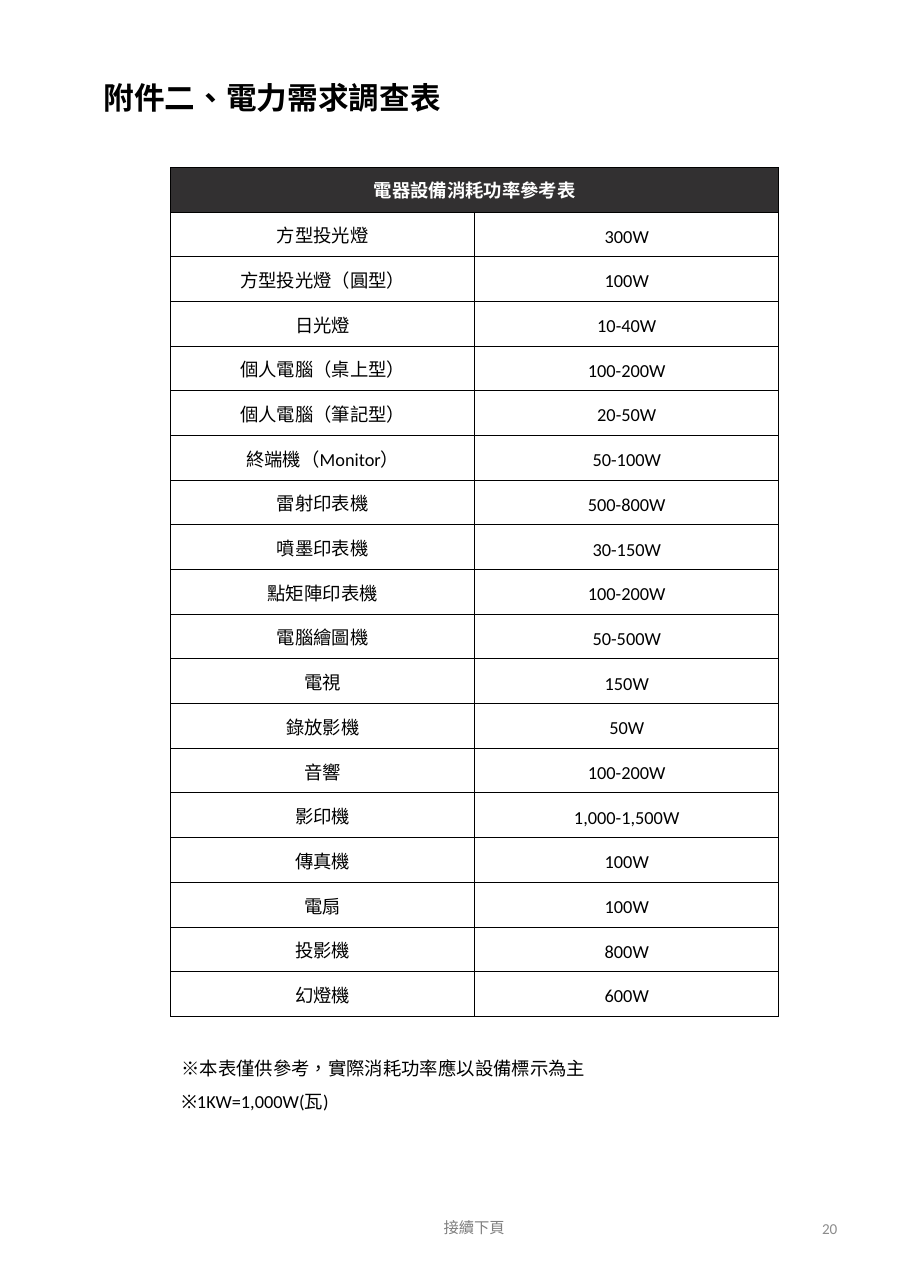
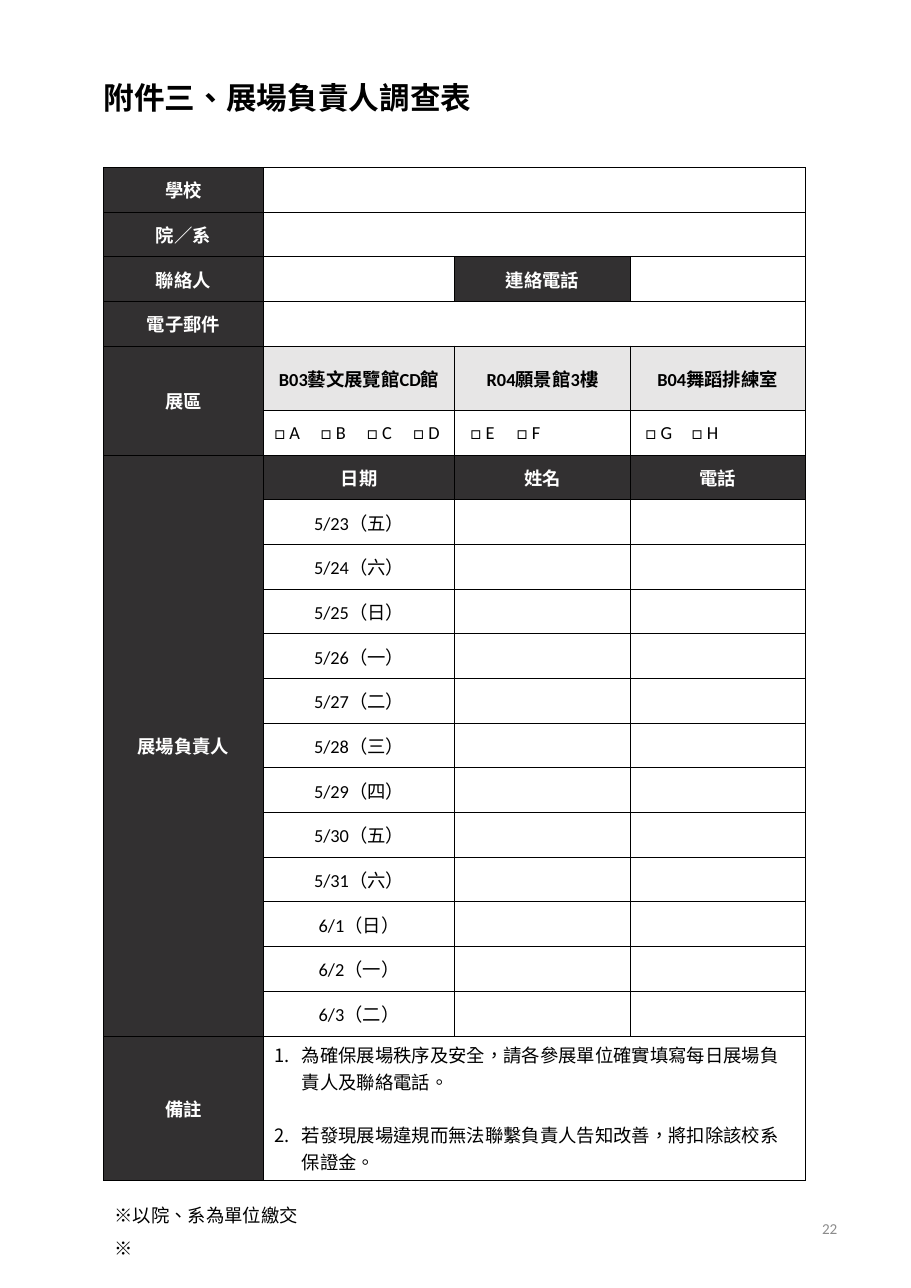
"""Build the power demand form and the venue manager form."""
from lxml import etree
from pptx import Presentation
from pptx.dml.color import RGBColor
from pptx.enum import text
from pptx.oxml import ns
from pptx.util import Inches, Pt

CJK, LATIN = "Noto Sans CJK SC", "Calibri"
BLACK, WHITE, DARK, PALE = "000000", "FFFFFF", "323031", "E7E6E6"
ROW = 7.71 / 19
TOP = 1.52
LEFT, MID, RIGHT = text.PP_ALIGN.LEFT, text.PP_ALIGN.CENTER, text.PP_ALIGN.RIGHT


def put(para, words, size=12, hue=BLACK, bold=False, face=LATIN):
    """Add one run with its font, size and colour."""
    run = para.add_run()
    run.text = words
    run.font.size, run.font.bold, run.font.name = Pt(size), bold, face
    run.font.color.rgb = RGBColor.from_string(hue)
    props = run._r.get_or_add_rPr()
    props.set("lang", "zh-TW")
    latin = props.find(ns.qn("a:latin"))
    east = etree.Element(ns.qn("a:ea"), typeface=CJK)
    latin.addnext(east)


def frame(cell, hue):
    """Fill one cell and draw its four borders."""
    if hue:
        cell.fill.solid()
        cell.fill.fore_color.rgb = RGBColor.from_string(hue)
    else:
        cell.fill.background()
    props = cell._tc.get_or_add_tcPr()
    for i, side in enumerate("LRTB"):
        line = etree.Element(ns.qn("a:ln" + side), w=str(Pt(0.75)))
        fill = etree.SubElement(line, ns.qn("a:solidFill"))
        etree.SubElement(fill, ns.qn("a:srgbClr"), val=BLACK)
        props.insert(i, line)


power = [
    ("方型投光燈", "300W"),
    ("方型投光燈（圓型）", "100W"),
    ("日光燈", "10-40W"),
    ("個人電腦（桌上型）", "100-200W"),
    ("個人電腦（筆記型）", "20-50W"),
    ("終端機（|Monitor|）", "50-100W"),
    ("雷射印表機", "500-800W"),
    ("噴墨印表機", "30-150W"),
    ("點矩陣印表機", "100-200W"),
    ("電腦繪圖機", "50-500W"),
    ("電視", "150W"),
    ("錄放影機", "50W"),
    ("音響", "100-200W"),
    ("影印機", "1,000-1,500W"),
    ("傳真機", "100W"),
    ("電扇", "100W"),
    ("投影機", "800W"),
    ("幻燈機", "600W"),
]
days = ["5/23（五）", "5/24（六）", "5/25（日）", "5/26（一）", "5/27（二）", "5/28（三）",
        "5/29（四）", "5/30（五）", "5/31（六）", "6/1（日）", "6/2（一）", "6/3（二）"]
venue = [
    ("學校", "", "", ""),
    ("院／系", "", "", ""),
    ("聯絡人", "", "連絡電話", ""),
    ("電子郵件", "", "", ""),
    ("展區", "B03藝文展覽館CD館", "R04願景館3樓", "B04舞蹈排練室"),
    ("", "□ A\t□ B\t□ C\t□ D", "□ E\t□ F", "□ G\t□ H"),
    ("展場負責人", "日期", "姓名", "電話"),
    *[("", day, "", "") for day in days],
    ("備註", "", "", ""),
]
pages = [
    dict(title="附件二、電力需求調查表", num="20", left=1.55, cols=[2.76, 2.76],
         rows=[("電器設備消耗功率參考表", ""), *power], last=ROW,
         dark={(0, 0), (0, 1)}, pale=set(), spans=[(0, 0, 0, 1)]),
    dict(title="附件三、展場負責人調查表", num="22", left=0.94, cols=[1.45, 1.74, 1.59, 1.59],
         rows=venue, last=1.1,
         dark={(r, 0) for r in range(20)} | {(6, c) for c in range(4)} | {(2, 2)},
         pale={(4, 1), (4, 2), (4, 3)},
         spans=[(0, 1, 0, 3), (1, 1, 1, 3), (3, 1, 3, 3), (4, 0, 5, 0),
                (6, 0, 18, 0), (19, 1, 19, 3)]),
]

deck = Presentation()
deck.slide_width, deck.slide_height = Inches(8.27), Inches(11.69)
plan = deck.slide_layouts[5]
head = plan.placeholders[0]
head.left, head.top, head.width, head.height = [Inches(n) for n in (0.84, 0.28, 6.76, 1.24)]
head.text_frame.vertical_anchor = text.MSO_ANCHOR.MIDDLE

grids = []
for page in pages:
    slide = deck.slides.add_slide(plan)
    para = slide.shapes.title.text_frame.paragraphs[0]
    para.alignment, para.line_spacing = LEFT, 0.9
    put(para, page["title"], 20, bold=True, face=CJK)

    rows, cols = page["rows"], page["cols"]
    tall = ROW * (len(rows) - 1) + page["last"]
    grid = slide.shapes.add_table(len(rows), len(cols), Inches(page["left"]), Inches(TOP),
                                  Inches(sum(cols)), Inches(tall)).table
    grid.first_row = grid.horz_banding = False
    grids.append(grid)
    for c, wide in enumerate(cols):
        grid.columns[c].width = Inches(wide)
    for r, row in enumerate(rows):
        grid.rows[r].height = Inches(page["last"] if r == len(rows) - 1 else ROW)
        for c, words in enumerate(row):
            cell = grid.cell(r, c)
            dark, pale = (r, c) in page["dark"], (r, c) in page["pale"]
            frame(cell, DARK if dark else PALE if pale else None)
            cell.vertical_anchor = text.MSO_ANCHOR.MIDDLE
            para = cell.text_frame.paragraphs[0]
            para.alignment = MID
            plain = rows is not venue and r > 0
            if plain:
                cell.margin_left = cell.margin_right = cell.margin_top = cell.margin_bottom = 0
                para.line_spacing = Pt(17.9)
            for part in filter(None, words.split("|")):
                face = CJK if plain and not part.isascii() else LATIN
                put(para, part, hue=WHITE if dark else BLACK, bold=dark or pale, face=face)
    for r, c, low, far in page["spans"]:
        grid.cell(r, c).merge(grid.cell(low, far))

form = grids[1]
for c in (1, 2, 3):
    cell = form.cell(5, c)
    cell.margin_left = Inches(0.1 if c == 1 else 0.14)
    para = cell.text_frame.paragraphs[0]
    para.alignment = LEFT
    tabs = etree.SubElement(para._p.get_or_add_pPr(), ns.qn("a:tabLst"))
    for i in (1, 2, 3):
        etree.SubElement(tabs, ns.qn("a:tab"), pos=str(Inches(0.42 * i)), algn="l")

rules = ["為確保展場秩序及安全，請各參展單位確實填寫每日展場負責人及聯絡電話。",
         "若發現展場違規而無法聯繫負責人告知改善，將扣除該校系保證金。"]
body = form.cell(19, 1).text_frame
for i, rule in enumerate(rules):
    para = body.add_paragraph() if i else body.paragraphs[0]
    para.alignment = LEFT
    props = para._p.get_or_add_pPr()
    props.set("marL", str(Inches(0.25)))
    props.set("indent", str(-Inches(0.25)))
    etree.SubElement(props, ns.qn("a:buFont"), typeface=CJK)
    etree.SubElement(props, ns.qn("a:buAutoNum"), type="arabicPeriod")
    if i:
        para.space_before = Pt(17.5)
    put(para, rule, face=CJK)

notes = [
    (0, (1.55, 9.45, 3.88, 0.67), False, 1.5, LEFT, 12, BLACK,
     [("※本表僅供參考，實際消耗功率應以設備標示為主", CJK), ("※1KW=1,000W(瓦)", LATIN)]),
    (0, (3.93, 11.01, 0.76, 0.27), False, 1, LEFT, 10, "808080", [("接續下頁", LATIN)]),
    (1, (0.94, 10.78, 2, 0.37), True, 1.5, LEFT, 12, BLACK, [("※以院、系為單位繳交※", CJK)]),
    *[(i, (5.84, 10.84, 1.86, 0.62), True, 1, RIGHT, 9.9, "8C8C8C", [(page["num"], LATIN)])
      for i, page in enumerate(pages)],
]
for i, place, wrap, gap, side, size, hue, lines in notes:
    box = deck.slides[i].shapes.add_textbox(*[Inches(n) for n in place]).text_frame
    box.word_wrap = wrap
    if side == RIGHT:
        box.vertical_anchor = text.MSO_ANCHOR.MIDDLE
    else:
        box.auto_size = text.MSO_AUTO_SIZE.SHAPE_TO_FIT_TEXT
    for n, (words, face) in enumerate(lines):
        para = box.add_paragraph() if n else box.paragraphs[0]
        para.alignment, para.line_spacing = side, gap
        put(para, words, size, hue, face=face)

deck.save("out.pptx")
